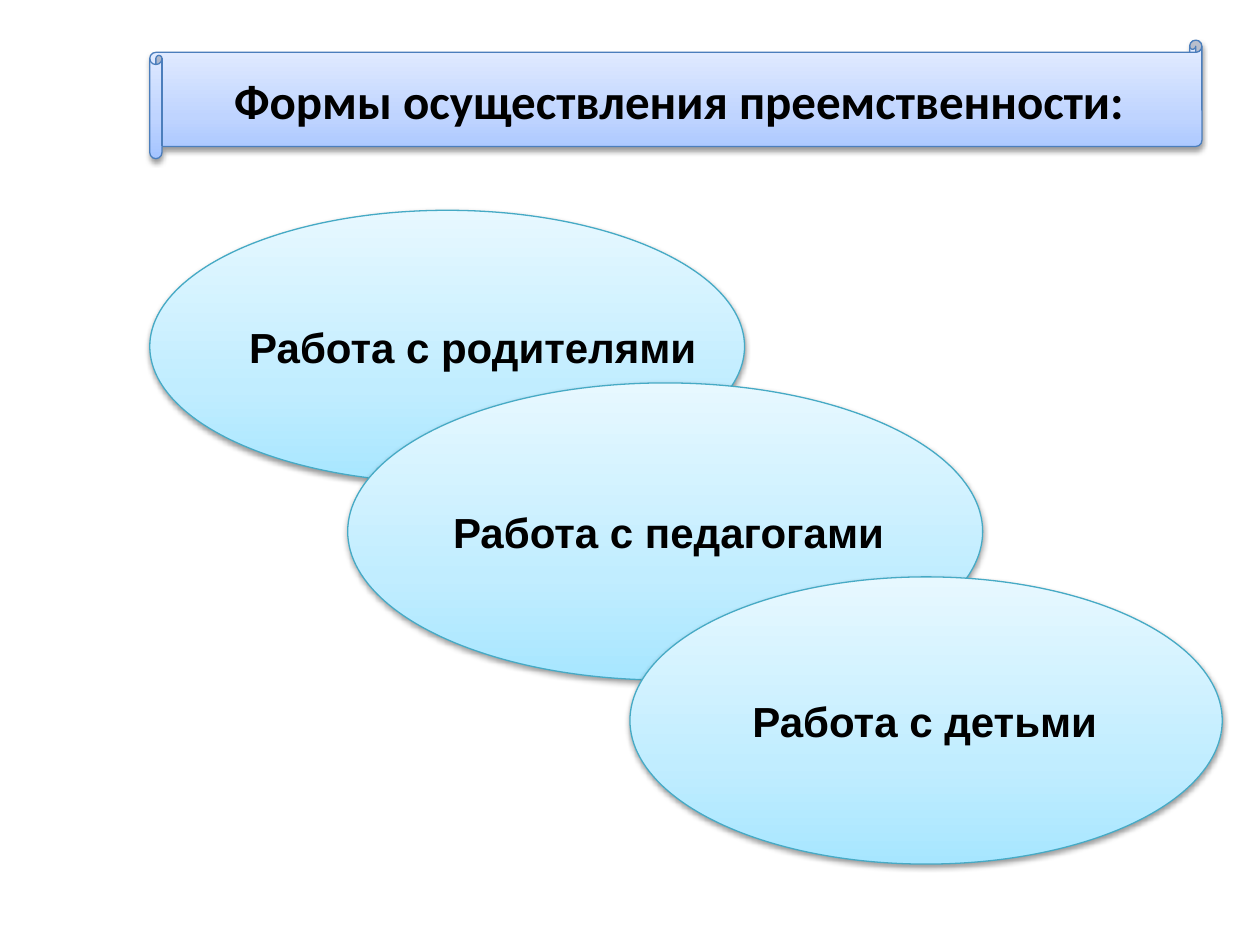
from copy import deepcopy

from lxml import etree
from pptx import Presentation
from pptx.dml.color import RGBColor
from pptx.enum.shapes import MSO_SHAPE
from pptx.enum.text import MSO_ANCHOR, PP_ALIGN
from pptx.oxml.ns import qn
from pptx.util import Cm, Pt

ELLIPSE = MSO_SHAPE.OVAL
SCROLL = MSO_SHAPE.HORIZONTAL_SCROLL
LEFT, CENTER = PP_ALIGN.LEFT, PP_ALIGN.CENTER
MIDDLE = MSO_ANCHOR.MIDDLE
TITLE_ONLY = 5

BLUE_STOPS = [(0, "A4C4FF"), (0.35, "BFD4FF"), (1, "E6EEFF")]
AQUA_STOPS = [(0, "A7E6FF"), (0.35, "C1EDFF"), (1, "E7F8FF")]


def color(value):
    return RGBColor.from_string(value)


def write_text(shape, text, font="Arial", size=24, align=LEFT, wrap=False, indent=0.25):
    frame = shape.text_frame
    frame.word_wrap = wrap
    frame.vertical_anchor = MIDDLE
    frame.margin_left = Cm(indent)
    paragraph = frame.paragraphs[0]
    paragraph.alignment = align
    run = paragraph.add_run()
    run.text = text
    run.font.name = font
    run.font.size = Pt(size)
    run.font.bold = True
    run.font.color.rgb = color("000000")


def fill_gradient(shape, stops):
    """Fill from the bottom upwards with (position, colour) stops."""
    shape.fill.gradient()
    shape.fill.gradient_angle = 90
    stop_list = shape.element.spPr.find(qn("a:gradFill")).find(qn("a:gsLst"))
    while len(stop_list) < len(stops):
        stop_list.append(deepcopy(stop_list[0]))
    for stop, (position, value) in zip(shape.fill.gradient_stops, stops):
        stop.position = position
        stop.color.rgb = color(value)


def add_shadow(shape):
    shape.shadow.inherit = False
    effects = shape.element.spPr.find(qn("a:effectLst"))
    shadow = etree.SubElement(effects, qn("a:outerShdw"), blurRad=str(Pt(3.1)),
                              dist=str(Pt(1.6)), dir="5400000", rotWithShape="0")
    shade = etree.SubElement(shadow, qn("a:srgbClr"), val="000000")
    etree.SubElement(shade, qn("a:alpha"), val="38000")


class SlideBuilder:
    def __init__(self, presentation):
        self.slide = presentation.slides.add_slide(presentation.slide_layouts[TITLE_ONLY])

    def add_panel(self, kind, left, top, width, height, stops, line):
        shape = self.slide.shapes.add_shape(kind, Cm(left), Cm(top), Cm(width), Cm(height))
        fill_gradient(shape, stops)
        shape.line.color.rgb = color(line)
        shape.line.width = Pt(0.75)
        add_shadow(shape)
        return shape

    def add_ellipse(self, text, left, top, width, height, indent=0.25):
        ellipse = self.add_panel(ELLIPSE, left, top, width, height, AQUA_STOPS, "46AAC5")
        write_text(ellipse, text, indent=indent)

    def add_title(self, text, left, top, width, height, curl=0.25):
        """Put the title on a scroll, inside its rolled ends."""
        scroll = self.add_panel(SCROLL, left, top, width, height, BLUE_STOPS, "4B7EBC")
        scroll.adjustments[0] = 0.103
        title = self.slide.shapes.title
        title.left, title.top = Cm(left + curl), Cm(top)
        title.width, title.height = Cm(width - 1.5 * curl), Cm(height)
        write_text(title, text, font="Calibri", size=28, align=CENTER, wrap=True)
        scroll.element.addnext(title.element)


def main():
    presentation = Presentation()
    presentation.slide_width, presentation.slide_height = Cm(25.4), Cm(19.05)
    builder = SlideBuilder(presentation)
    builder.add_ellipse("Работа с родителями", 3.02, 4.24, 11.99, 5.49)
    builder.add_ellipse("Работа с педагогами", 7.01, 7.72, 12.8, 5.99)
    builder.add_ellipse("Работа с детьми", 12.7, 11.63, 11.94, 5.79, indent=0.72)
    builder.add_title("Формы осуществления преемственности:", 3.02, 0.81, 21.21, 2.39)
    presentation.save("out.pptx")


if __name__ == "__main__":
    main()
